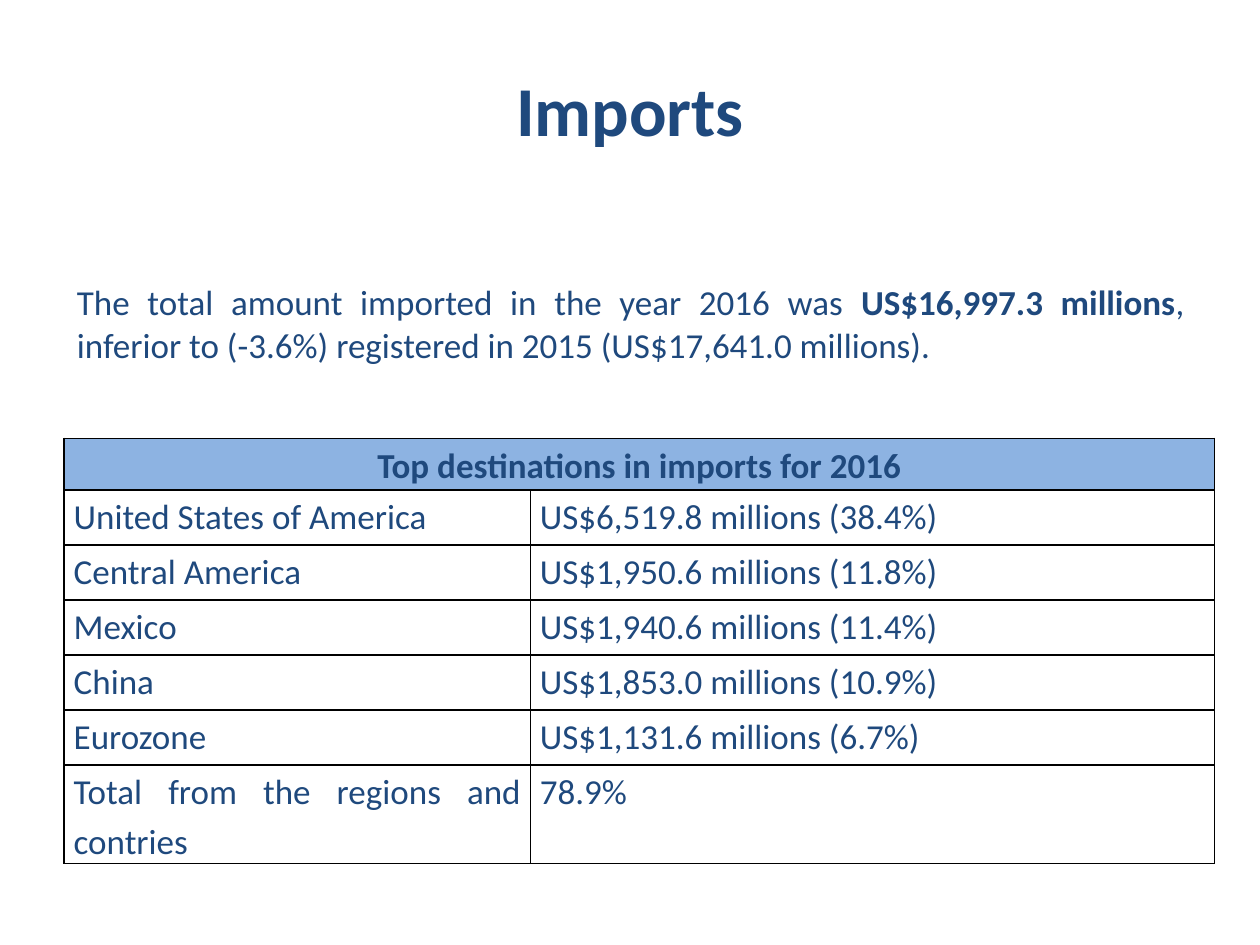
from dataclasses import dataclass

import pptx
import pptx.dml.color
import pptx.enum.text
import pptx.oxml
import pptx.oxml.ns
import pptx.util
from lxml import etree

Pt = pptx.util.Pt
RGB = pptx.dml.color.RGBColor
Align = pptx.enum.text.PP_ALIGN
Anchor = pptx.enum.text.MSO_ANCHOR
qn = pptx.oxml.ns.qn


@dataclass(frozen=True)
class Theme:
    face: str = "Calibri"
    ink: RGB = RGB.from_string("1F497D")
    header_fill: RGB = RGB.from_string("8DB3E2")
    cell_fill: RGB = RGB.from_string("FFFFFF")
    border: str = "000000"
    title_size: int = 40
    text_size: int = 20


@dataclass(frozen=True)
class Box:
    left: float
    top: float
    width: float
    height: float


@dataclass(frozen=True)
class Origin:
    region: str
    amount: str


THEME = Theme()
TITLE_BOX = Box(36, 21.6, 648, 90)
SUMMARY_BOX = Box(36.72, 156.96, 647.28, 325.44)
TABLE_BOX = Box(36.72, 250.56, 657.36, 241.92)
COLUMN_WIDTHS = (266.4, 390.96)
HEADER_HEIGHT, ROW_HEIGHT, TOTAL_HEIGHT = 29.5, 31.44, 56
ORIGINS = (
    Origin("United States of America", "US$6,519.8 millions (38.4%)"),
    Origin("Central America", "US$1,950.6 millions (11.8%)"),
    Origin("Mexico", "US$1,940.6 millions (11.4%)"),
    Origin("China", "US$1,853.0 millions (10.9%)"),
    Origin("Eurozone", "US$1,131.6 millions (6.7%)"),
    Origin("Total from the regions and contries", "78.9%"),
)


def place(shape, box: Box) -> None:
    shape.left, shape.top = Pt(box.left), Pt(box.top)
    shape.width, shape.height = Pt(box.width), Pt(box.height)


def set_font(font, size: int) -> None:
    font.name = THEME.face
    font.size = Pt(size)
    font.color.rgb = THEME.ink


def add_borders(cell) -> None:
    properties = cell._tc.get_or_add_tcPr()
    for position, side in enumerate(("lnL", "lnR", "lnT", "lnB")):
        line = etree.Element(qn(f"a:{side}"), w=str(Pt(1)))
        fill = etree.SubElement(line, qn("a:solidFill"))
        etree.SubElement(fill, qn("a:srgbClr"), val=THEME.border)
        properties.insert(position, line)


def fill_cell(cell, text: str, header: bool = False) -> None:
    cell.margin_left = cell.margin_right = Pt(5.4)
    cell.margin_top = cell.margin_bottom = 0
    cell.fill.solid()
    cell.fill.fore_color.rgb = THEME.header_fill if header else THEME.cell_fill
    add_borders(cell)
    cell.text = text
    paragraph = cell.text_frame.paragraphs[0]
    paragraph.alignment = Align.CENTER if header else Align.JUSTIFY
    paragraph.line_spacing = 1.15
    paragraph.space_after = Pt(10)
    set_font(paragraph.font, THEME.text_size)
    paragraph.font.bold = header


def add_title(slide) -> None:
    title = slide.shapes.title
    place(title, TITLE_BOX)
    title.text = "Imports"
    title.text_frame.vertical_anchor = Anchor.MIDDLE
    paragraph = title.text_frame.paragraphs[0]
    paragraph.alignment = Align.CENTER
    paragraph.line_spacing = 0.8
    set_font(paragraph.font, THEME.title_size)
    paragraph.font.bold = True


def add_summary(slide) -> None:
    summary = slide.placeholders[1]
    place(summary, SUMMARY_BOX)
    paragraph = summary.text_frame.paragraphs[0]
    paragraph.alignment = Align.JUSTIFY
    paragraph.space_before = Pt(0)
    properties = paragraph._p.get_or_add_pPr()
    properties.set("marL", "0")
    properties.set("indent", "0")
    etree.SubElement(properties, qn("a:buNone"))
    set_font(paragraph.font, THEME.text_size)
    paragraph.add_run().text = "The total amount imported in the year 2016 was "
    total = paragraph.add_run()
    total.text = "US$16,997.3 millions"
    total.font.bold = True
    paragraph.add_run().text = (
        ", inferior to (-3.6%) registered in 2015 (US$17,641.0 millions). "
    )


def add_origins(slide) -> None:
    box = TABLE_BOX
    table = slide.shapes.add_table(
        len(ORIGINS) + 1, len(COLUMN_WIDTHS),
        Pt(box.left), Pt(box.top), Pt(box.width), Pt(box.height),
    ).table
    table.first_row = table.horz_banding = False
    for column, width in zip(table.columns, COLUMN_WIDTHS):
        column.width = Pt(width)
    for row in table.rows:
        row.height = Pt(ROW_HEIGHT)
    table.rows[0].height = Pt(HEADER_HEIGHT)
    table.rows[len(ORIGINS)].height = Pt(TOTAL_HEIGHT)

    heading = table.cell(0, 0)
    heading.merge(table.cell(0, 1))
    fill_cell(heading, "Top destinations in imports for 2016", header=True)
    add_borders(table.cell(0, 1))
    for number, origin in enumerate(ORIGINS, start=1):
        fill_cell(table.cell(number, 0), origin.region)
        fill_cell(table.cell(number, 1), origin.amount)


def main() -> None:
    deck = pptx.Presentation()
    deck.slide_width, deck.slide_height = Pt(720), Pt(540)
    slide = deck.slides.add_slide(deck.slide_layouts[1])
    add_title(slide)
    add_summary(slide)
    add_origins(slide)
    deck.save("out.pptx")


if __name__ == "__main__":
    main()
